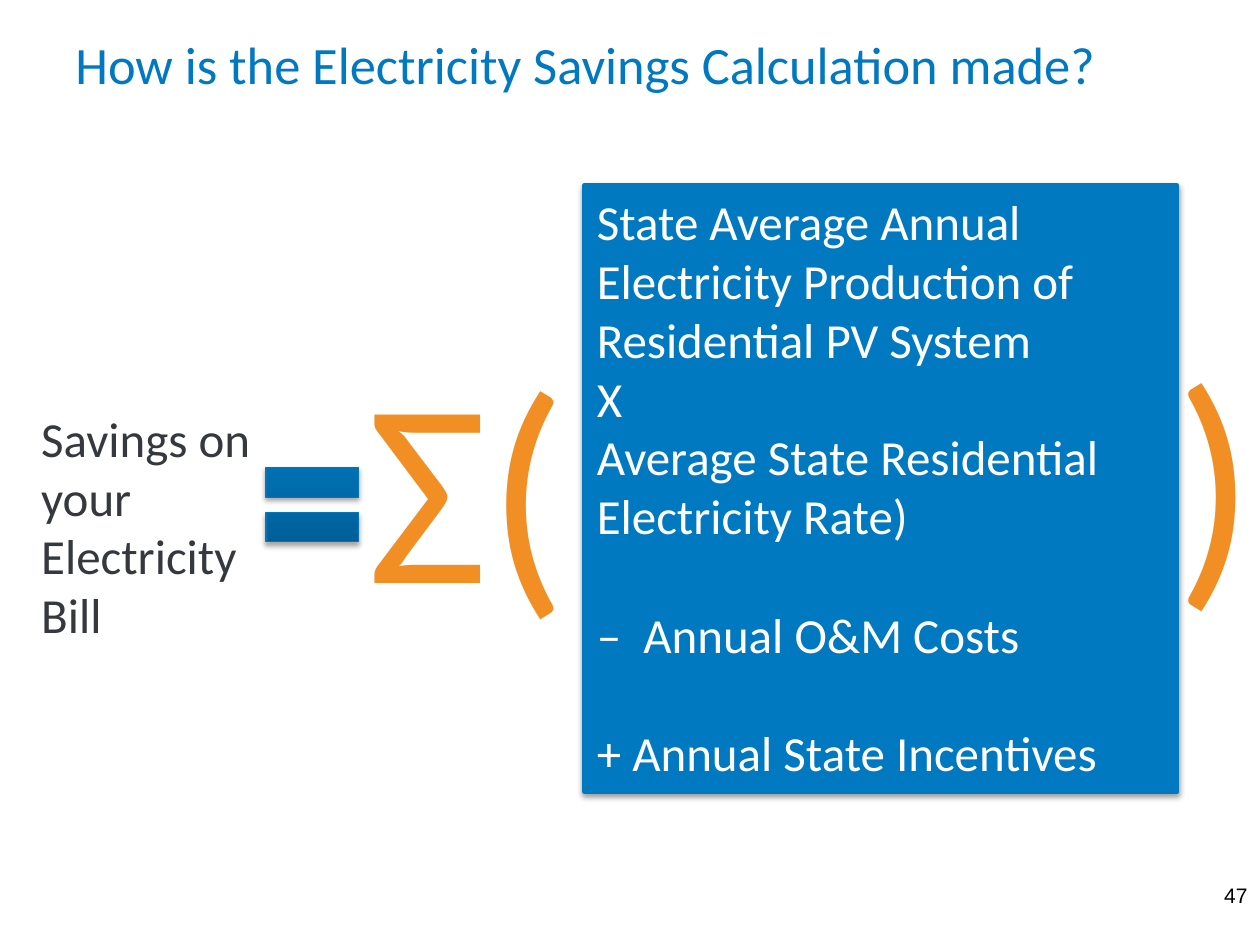
"""Build the electricity savings formula slide."""
from lxml import etree
from pptx import Presentation
from pptx.dml.color import RGBColor
from pptx.enum import shapes, text
from pptx.oxml import ns
from pptx.util import Pt

BLUE = RGBColor(0x00, 0x79, 0xC1)
EDGE_BLUE = RGBColor(0x00, 0x76, 0xBD)
DEEP_BLUE = RGBColor(0x00, 0x5A, 0x90)
LIGHT_BLUE = RGBColor(0x00, 0x76, 0xBC)
GREY = RGBColor(0x35, 0x39, 0x3E)
ORANGE = RGBColor(0xF1, 0x8F, 0x25)
WHITE = RGBColor(0xFF, 0xFF, 0xFF)
BLACK = RGBColor(0x00, 0x00, 0x00)

LEFT, RIGHT = text.PP_ALIGN.LEFT, text.PP_ALIGN.RIGHT
TOP, MIDDLE = text.MSO_ANCHOR.TOP, text.MSO_ANCHOR.MIDDLE
BODY_SIZE = 28
LINE_GAP = 34

LABELS = [
    ("How is the Electricity Savings Calculation made?",
     (36, 1.5, 648, 70), 30, "Calibri", BLUE, LEFT, MIDDLE, 0),
    ("Savings on your Electricity Bill",
     (16.5, 190, 141, 221), BODY_SIZE, "Calibri", GREY, LEFT, MIDDLE, 5.6),
    ("Σ(", (203, 180, 146, 189.5), 150, "Calibri", ORANGE, LEFT, TOP, 0),
    (")", (664.5, 175.5, 90, 189.5), 150, "Calibri", ORANGE, LEFT, TOP, 0),
    ("47", (684, 497, 36, 29), 12, "Arial", BLACK, RIGHT, MIDDLE, 0),
]
TERMS = [
    ("State Average Annual Electricity Production of Residential PV System", 0),
    ("X", 0),
    ("Average State Residential Electricity Rate)", 0),
    ("–  Annual O&M Costs", LINE_GAP),
    ("+ Annual State Incentives", LINE_GAP),
]
EQUALS_BOX = (142.5, 252.5, 72, 72)
TERMS_BOX = (334, 106, 338.5, 346.5)


def points(box):
    return [Pt(length) for length in box]


def style(paragraph, size, font, colour, align, before):
    paragraph.alignment = align
    paragraph.space_before = Pt(before)
    for run in paragraph.runs:
        run.font.size = Pt(size)
        run.font.name = font
        run.font.color.rgb = colour


def add_label(slide, words, box, size, font, colour, align, anchor, before):
    frame = slide.shapes.add_textbox(*points(box)).text_frame
    frame.word_wrap = True
    frame.vertical_anchor = anchor
    frame.text = words
    style(frame.paragraphs[0], size, font, colour, align, before)


def add_block(slide, preset, box, edge, edge_width, opacity, distance):
    block = slide.shapes.add_shape(preset, *points(box))
    block.line.color.rgb = edge
    block.line.width = Pt(edge_width)
    block.shadow.inherit = False
    effects = block._element.spPr.find(ns.qn("a:effectLst"))
    shadow = etree.SubElement(
        effects, ns.qn("a:outerShdw"), blurRad=str(Pt(3.1)),
        dist=str(Pt(distance)), dir="5400000", rotWithShape="0")
    black = etree.SubElement(shadow, ns.qn("a:srgbClr"), val="000000")
    etree.SubElement(black, ns.qn("a:alpha"), val=str(opacity * 1000))
    return block


def main():
    deck = Presentation()
    deck.slide_width, deck.slide_height = Pt(720), Pt(540)
    slide = deck.slides.add_slide(deck.slide_layouts[6])

    equals = add_block(slide, shapes.MSO_SHAPE.MATH_EQUAL, EQUALS_BOX,
                       EDGE_BLUE, 0.75, 35, 1.8)
    equals.fill.gradient()
    equals.fill.gradient_angle = 90
    for stop, colour in zip(equals.fill.gradient_stops, (DEEP_BLUE, LIGHT_BLUE)):
        stop.color.rgb = colour

    terms = add_block(slide, shapes.MSO_SHAPE.RECTANGLE, TERMS_BOX,
                      BLUE, 3, 38, 1.6)
    terms.fill.solid()
    terms.fill.fore_color.rgb = BLUE
    frame = terms.text_frame
    frame.word_wrap = True
    frame.vertical_anchor = TOP
    frame.text = "\n".join(words for words, _ in TERMS)
    for paragraph, (_, before) in zip(frame.paragraphs, TERMS):
        style(paragraph, BODY_SIZE, "Calibri", WHITE, LEFT, before)

    for label in LABELS:
        add_label(slide, *label)
    deck.save("out.pptx")


if __name__ == "__main__":
    main()
